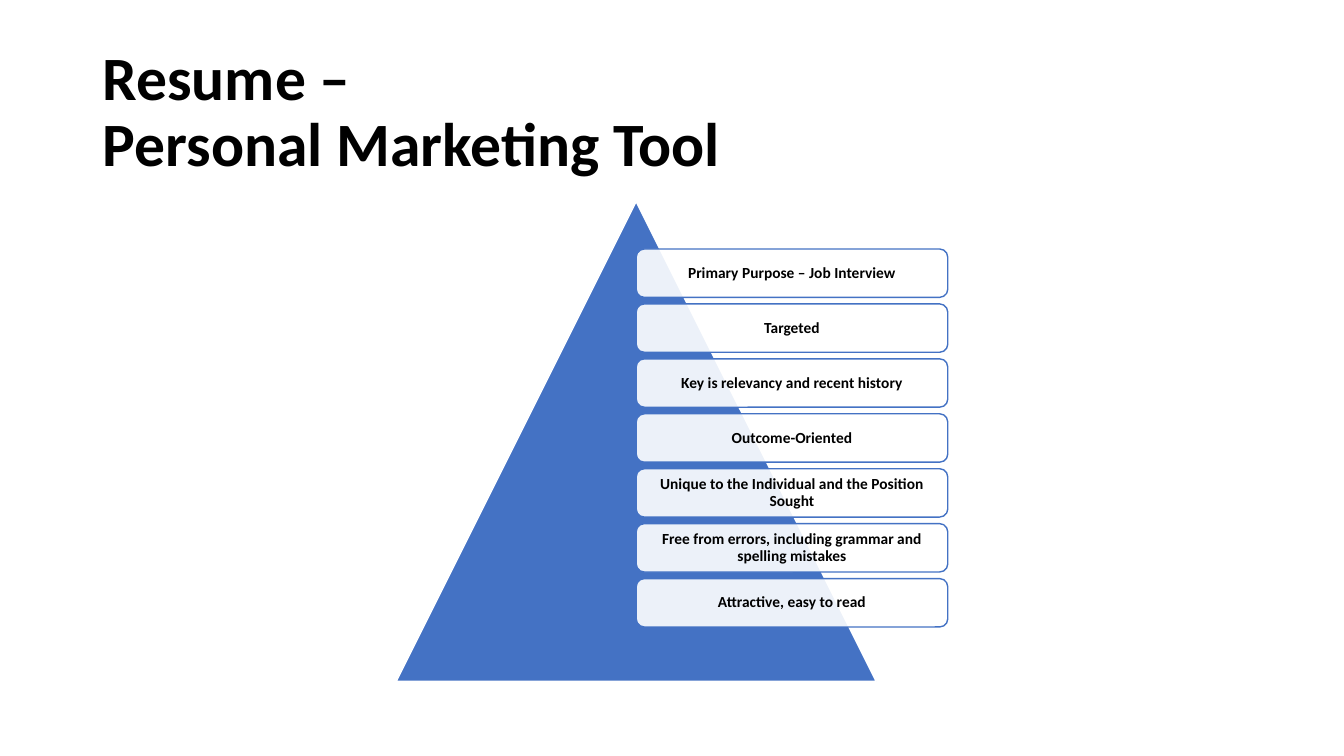
import pptx
import pptx.util
import pptx.dml.color
import pptx.enum.shapes
import pptx.enum.text
import pptx.oxml.ns
from lxml import etree

Inches = pptx.util.Inches
Pt = pptx.util.Pt
SHAPE = pptx.enum.shapes.MSO_SHAPE
ALIGN = pptx.enum.text.PP_ALIGN

COLORS = {"text": "000000", "accent": "4472C4", "white": "FFFFFF"}
FONT = "Calibri"


def color(name):
    return pptx.dml.color.RGBColor.from_string(COLORS[name])


def write_text(frame, text, size, align=ALIGN.LEFT, inset=(0.1, 0.05)):
    """Fill a text frame with one bold paragraph, centred vertically."""
    frame.word_wrap = True
    frame.vertical_anchor = pptx.enum.text.MSO_ANCHOR.MIDDLE
    frame.margin_left = frame.margin_right = Inches(inset[0])
    frame.margin_top = frame.margin_bottom = Inches(inset[1])
    paragraph = frame.paragraphs[0]
    paragraph.text = text
    paragraph.alignment = align
    paragraph.line_spacing = 0.9
    for run in paragraph.runs:
        run.font.name = FONT
        run.font.size = Pt(size)
        run.font.bold = True
        run.font.color.rgb = color("text")


class SlideBuilder:
    def __init__(self, slide):
        self.slide = slide

    def title(self, text, left, top, width, height):
        heading = self.slide.shapes.add_textbox(
            Inches(left), Inches(top), Inches(width), Inches(height))
        write_text(heading.text_frame, text, size=44)

    def shape(self, kind, left, top, width, height, fill, line, opacity=100):
        figure = self.slide.shapes.add_shape(
            kind, Inches(left), Inches(top), Inches(width), Inches(height))
        figure.shadow.inherit = False
        figure.fill.solid()
        figure.fill.fore_color.rgb = color(fill)
        figure.line.color.rgb = color(line)
        figure.line.width = Pt(1)
        if opacity < 100:
            tag = pptx.oxml.ns.qn("a:srgbClr")
            fill_color = figure.fill._xPr.find(f".//{tag}")
            etree.SubElement(fill_color, pptx.oxml.ns.qn("a:alpha"),
                             val=str(opacity * 1000))
        return figure

    def card(self, text, left, top, width, height):
        card = self.shape(SHAPE.ROUNDED_RECTANGLE, left, top, width, height,
                          fill="white", line="accent", opacity=90)
        write_text(card.text_frame, text, size=11, align=ALIGN.CENTER,
                   inset=(0.05, 0.05))


QUALITIES = [
    "Primary Purpose – Job Interview",
    "Targeted",
    "Key is relevancy and recent history",
    "Outcome-Oriented",
    "Unique to the Individual and the Position Sought",
    "Free from errors, including grammar and spelling mistakes",
    "Attractive, easy to read",
]


def main():
    presentation = pptx.Presentation()
    presentation.slide_width = Inches(13.33)
    presentation.slide_height = Inches(7.5)
    builder = SlideBuilder(
        presentation.slides.add_slide(presentation.slide_layouts[6]))

    # Title
    builder.title("Resume – \nPersonal Marketing Tool", 0.92, 0.4, 11.5, 1.45)

    # Pyramid
    builder.shape(SHAPE.ISOSCELES_TRIANGLE, 3.93, 2, 4.76, 4.76,
                  fill="accent", line="white")

    # Evenly spaced cards, from the first top to the last
    first_top, last_top = 2.47, 5.74
    pitch = (last_top - first_top) / (len(QUALITIES) - 1)
    for index, quality in enumerate(QUALITIES):
        builder.card(quality, 6.31, first_top + index * pitch, 3.09, 0.48)

    presentation.save("out.pptx")


if __name__ == "__main__":
    main()
